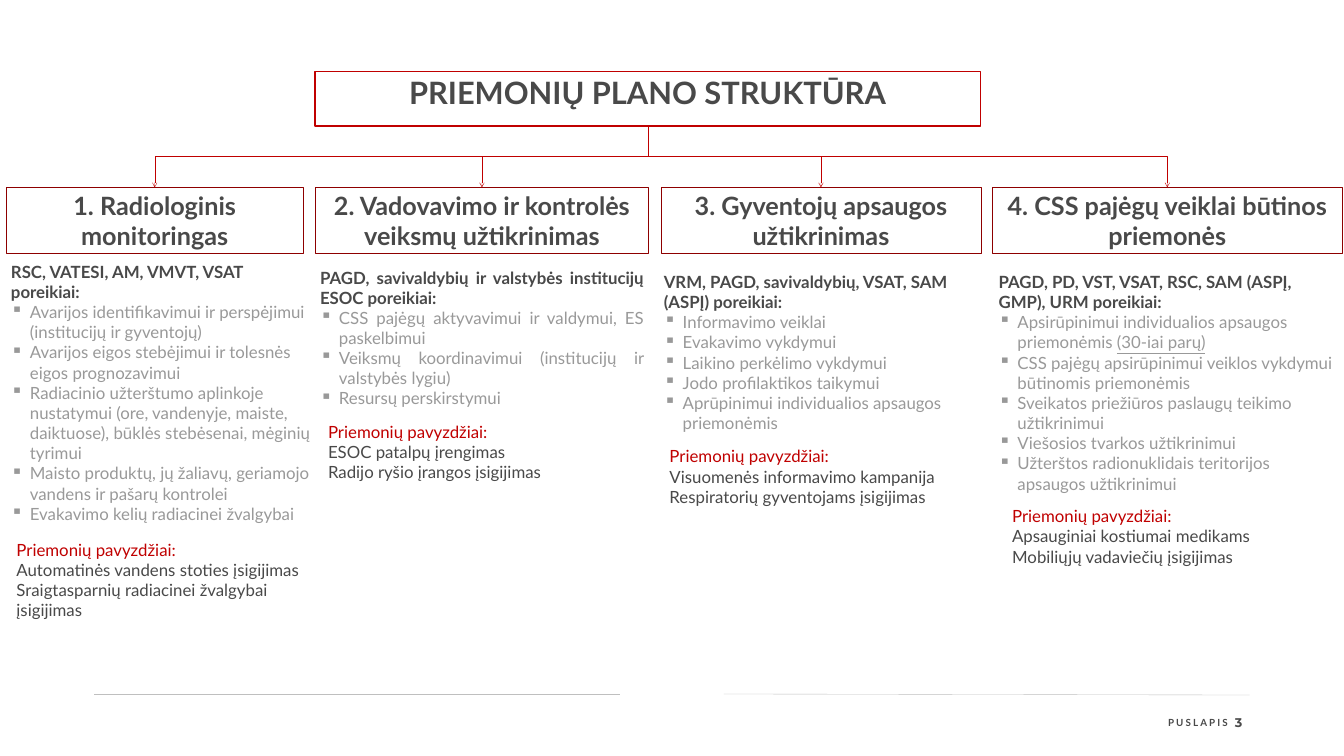
"""Build the slide that shows the structure of the plan of measures."""
from dataclasses import dataclass

from lxml.etree import SubElement
from pptx import Presentation
from pptx.dml.color import RGBColor
from pptx.enum.shapes import MSO_CONNECTOR as Link, MSO_SHAPE as Preset
from pptx.enum.text import MSO_ANCHOR as Anchor, MSO_AUTO_SIZE as Fit, PP_ALIGN as Align
from pptx.oxml.ns import qn
from pptx.util import Pt


@dataclass(frozen=True)
class Theme:
    text: str = "494949"
    muted: str = "999999"
    accent: str = "C00000"
    border: str = "8E0000"
    rule: str = "BFBFBF"
    paper: str = "FFFFFF"
    font: str = "Lato"
    number_font: str = "Montserrat"
    title: int = 44
    heading: int = 36
    body: int = 24
    number: int = 18
    label: int = 14


@dataclass(frozen=True)
class Column:
    left: float
    width: float
    heading: str
    needs_frame: tuple
    needs_title: str
    needs: tuple
    samples_frame: tuple
    samples: tuple
    align: Align = Align.LEFT


THEME = Theme()
HEADING_TOP, HEADING_HEIGHT = 267.8, 94.3
TITLE_FRAME = (450, 102.2, 950.4, 77.6)
SAMPLES_TITLE = "Priemonių pavyzdžiai:"

COLUMNS = (
    Column(
        8.6, 424.8, "1. Radiologinis monitoringas",
        (8.6, 370, 447.1, 385.2), "RSC, VATESI, AM, VMVT, VSAT poreikiai:",
        ("Avarijos identifikavimui ir perspėjimui (institucijų ir gyventojų)",
         "Avarijos eigos stebėjimui ir tolesnės eigos prognozavimui",
         "Radiacinio užterštumo aplinkoje nustatymui (ore, vandenyje, maiste, "
         "daiktuose), būklės stebėsenai, mėginių tyrimui",
         "Maisto produktų, jų žaliavų, geriamojo vandens ir pašarų kontrolei",
         "Evakavimo kelių radiacinei žvalgybai"),
        (8.6, 747.4, 451.4, 161.3),
        ("Automatinės vandens stoties įsigijimas",
         "Sraigtasparnių radiacinei žvalgybai įsigijimas"),
    ),
    Column(
        450, 476.6, "2. Vadovavimo ir kontrolės veiksmų užtikrinimas",
        (450, 378.2, 476.6, 210.7),
        "PAGD, savivaldybių ir valstybės institucijų ESOC poreikiai:",
        ("CSS pajėgų aktyvavimui ir valdymui, ES paskelbimui",
         "Veiksmų koordinavimui (institucijų ir valstybės lygiu)",
         "Resursų perskirstymui"),
        (456.5, 594, 470.2, 102.2),
        ("ESOC patalpų įrengimas", "Radijo ryšio įrangos įsigijimas"),
        Align.JUSTIFY,
    ),
    Column(
        943.9, 457.2, "3. Gyventojų apsaugos užtikrinimas",
        (941, 384.5, 476.6, 239.8),
        "VRM, PAGD, savivaldybių, VSAT, SAM (ASPĮ) poreikiai:",
        ("Informavimo veiklai", "Evakavimo vykdymui", "Laikino perkėlimo vykdymui",
         "Jodo profilaktikos taikymui",
         "Aprūpinimui individualios apsaugos priemonėmis"),
        (943.9, 627.1, 457.2, 106.6),
        ("Visuomenės informavimo kampanija", "Respiratorių gyventojams įsigijimas"),
    ),
    Column(
        1417.7, 499, "4. CSS pajėgų veiklai būtinos priemonės",
        (1419.1, 384.5, 499, 326.9),
        "PAGD, PD, VST, VSAT, RSC, SAM (ASPĮ, GMP), URM poreikiai:",
        (("Apsirūpinimui individualios apsaugos priemonėmis ", "(30-iai parų)"),
         "CSS pajėgų apsirūpinimui veiklos vykdymui būtinomis priemonėmis",
         "Sveikatos priežiūros paslaugų teikimo užtikrinimui",
         "Viešosios tvarkos užtikrinimui",
         "Užterštos radionuklidais teritorijos apsaugos užtikrinimui"),
        (1433.5, 715, 470.2, 102.2),
        ("Apsauginiai kostiumai medikams", "Mobiliųjų vadaviečių įsigijimas"),
    ),
)


def apply(target, values):
    for name, value in values.items():
        setattr(target, name, value)


def rgb(color):
    return RGBColor.from_string(color)


def add_span(para, text, size, color, font=THEME.font, **values):
    span = para.add_run()
    span.text = text
    apply(span.font, {"name": font, "size": Pt(size), **values})
    span.font.color.rgb = rgb(color)
    return span


def add_para(box, align=Align.LEFT):
    frame = box.text_frame
    first = frame.paragraphs[0]
    para = frame.add_paragraph() if first.runs else first
    para.alignment = align
    return para


def add_bullet(para):
    properties = para._p.get_or_add_pPr()
    for name, value in {"marL": Pt(27), "indent": Pt(-27)}.items():
        properties.set(name, str(value))
    SubElement(properties, qn("a:buChar")).set("char", "▪")


def add_box(page, frame, preset=Preset.RECTANGLE, fill=None, border=None, weight=1, **values):
    box = page.shapes.add_shape(preset, *map(Pt, frame))
    box.shadow.inherit = False
    if fill:
        box.fill.solid()
        box.fill.fore_color.rgb = rgb(fill)
    else:
        box.fill.background()
    if border:
        box.line.color.rgb = rgb(border)
        box.line.width = Pt(weight)
    else:
        box.line.fill.background()
    apply(box.text_frame, {"word_wrap": True, "vertical_anchor": Anchor.TOP, **values})
    return box


def add_heading(page, frame, text, size, border, weight):
    box = add_box(page, frame, fill=THEME.paper, border=border, weight=weight)
    add_span(add_para(box, Align.CENTER), text, size, THEME.text, bold=True)


def add_line(page, kind, begin, end, color, arrow=False):
    line = page.shapes.add_connector(kind, *map(Pt, begin + end))
    line.line.color.rgb = rgb(color)
    line.line.width = Pt(0.5)
    if arrow:
        SubElement(line.line._get_or_add_ln(), qn("a:tailEnd")).set("type", "arrow")
    SubElement(line.element.spPr, qn("a:effectLst"))
    return line


def add_branch(page, begin, end):
    run, drop = end[0] - begin[0], end[1] - begin[1]
    middle_x, middle_y = begin[0] + run / 2, begin[1] + drop / 2
    side = 1 if run < 0 else -1
    across, down = side * drop / 2, abs(run) / 2
    line = add_line(page, Link.ELBOW, (middle_x - across, middle_y - down),
                    (middle_x + across, middle_y + down), THEME.accent, arrow=True)
    line.element.spPr.find(qn("a:xfrm")).set("rot", str(side * 90 % 360 * 60000))


def add_samples(page, column):
    box = add_box(page, column.samples_frame, Preset.ROUNDED_RECTANGLE,
                  vertical_anchor=Anchor.MIDDLE)
    add_span(add_para(box), SAMPLES_TITLE, THEME.body, THEME.accent)
    for sample in column.samples:
        add_span(add_para(box), sample, THEME.body, THEME.text)


def add_needs(page, column):
    box = add_box(page, column.needs_frame, fill=THEME.paper, auto_size=Fit.SHAPE_TO_FIT_TEXT)
    add_span(add_para(box, column.align), column.needs_title, THEME.body, THEME.text, bold=True)
    for need in column.needs:
        plain, *underlined = (need,) if isinstance(need, str) else need
        para = add_para(box, column.align)
        add_bullet(para)
        add_span(para, plain, THEME.body, THEME.muted)
        for text in underlined:
            add_span(para, text, THEME.body, THEME.muted, underline=True)


def add_footer_text(page, frame, text, size, font, align):
    box = page.shapes.add_textbox(*map(Pt, frame))
    margins = dict.fromkeys(("margin_left", "margin_top", "margin_right", "margin_bottom"), 0)
    apply(box.text_frame, {"word_wrap": False, "vertical_anchor": Anchor.MIDDLE, **margins})
    return add_span(add_para(box, align), text, size, THEME.text, font, bold=True)


def add_footer(page):
    add_line(page, Link.STRAIGHT, (134.6, 992.2), (885.6, 992.2), THEME.rule)
    add_line(page, Link.STRAIGHT, (1033.9, 991.4), (1784.9, 992.9), THEME.rule)
    add_footer_text(page, (1757, 1020, 24, 24), "3", THEME.number, THEME.number_font, Align.CENTER)
    label = add_footer_text(page, (1661, 1023.1, 92.6, 17.3), "PUSLAPIS",
                            THEME.label, THEME.font, Align.RIGHT)
    label._r.get_or_add_rPr().set("spc", "300")


def main():
    deck = Presentation()
    apply(deck, {"slide_width": Pt(1919.52), "slide_height": Pt(1080)})
    page = deck.slides.add_slide(deck.slide_layouts[6])
    add_footer(page)
    for column in COLUMNS:
        frame = (column.left, HEADING_TOP, column.width, HEADING_HEIGHT)
        add_heading(page, frame, column.heading, THEME.heading, THEME.border, 1)
    add_heading(page, TITLE_FRAME, "PRIEMONIŲ PLANO STRUKTŪRA", THEME.title, THEME.accent, 2)
    left, top, width, height = TITLE_FRAME
    for column in COLUMNS:
        add_branch(page, (left + width / 2, top + height),
                   (column.left + column.width / 2, HEADING_TOP))
    for add_part in (add_samples, add_needs):
        for column in COLUMNS:
            add_part(page, column)
    deck.save("out.pptx")


if __name__ == "__main__":
    main()
